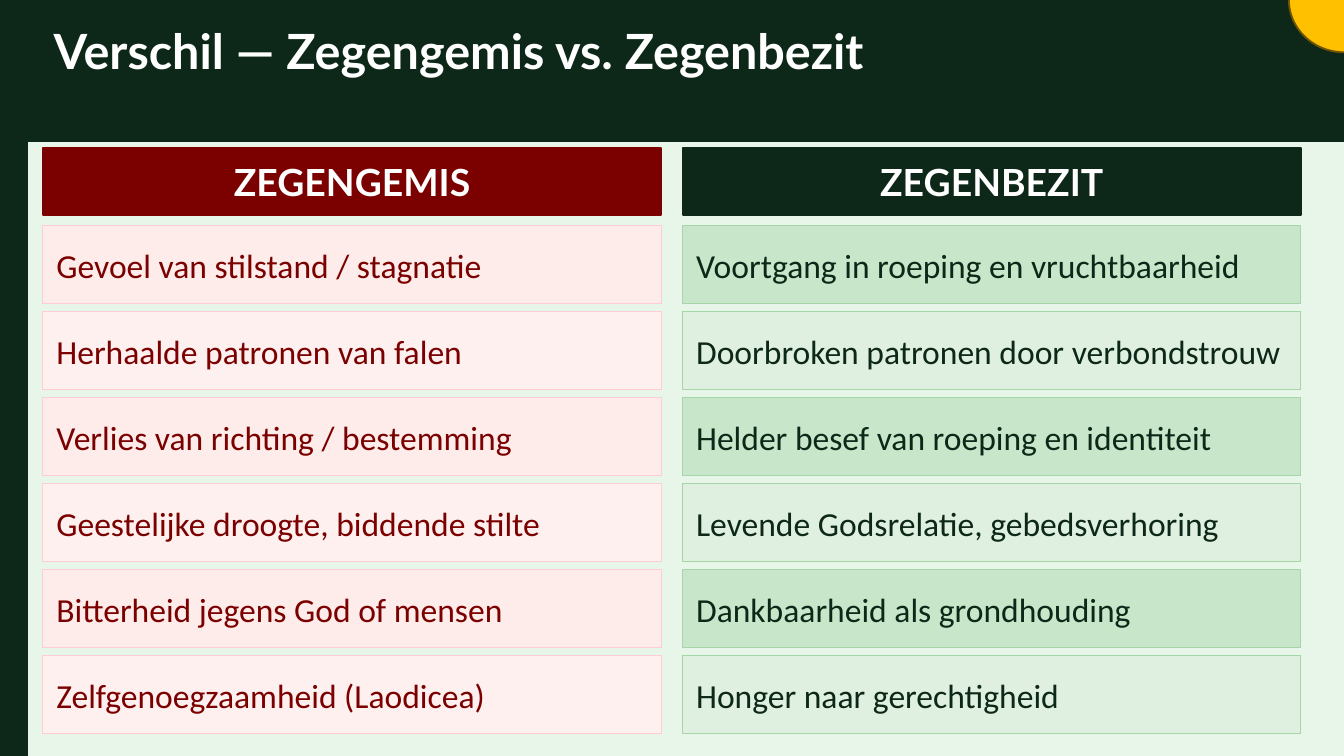
from dataclasses import dataclass

from pptx import Presentation
from pptx.dml.color import RGBColor
from pptx.enum.shapes import MSO_SHAPE
from pptx.enum.text import MSO_ANCHOR, PP_ALIGN
from pptx.util import Emu, Pt

RECTANGLE = MSO_SHAPE.RECTANGLE
OVAL = MSO_SHAPE.OVAL
LEFT = PP_ALIGN.LEFT
CENTER = PP_ALIGN.CENTER
MIDDLE = MSO_ANCHOR.MIDDLE

PX_PER_INCH = 200
EMU_PER_PX = 914400 // PX_PER_INCH


@dataclass(frozen=True)
class Theme:
    background: str = "E8F5E9"
    forest: str = "0D2818"
    maroon: str = "7B0000"
    white: str = "FFFFFF"
    gold: str = "FFC000"
    gold_edge: str = "705400"
    lack_fills: tuple = ("FDECEA", "FFF0F0")
    lack_edge: str = "FFCDD2"
    gain_fills: tuple = ("C8E6C9", "DFF0E0")
    gain_edge: str = "A5D6A7"
    heading_font: str = "Lato"
    body_font: str = "Calibri"
    title_size: int = 26
    heading_size: int = 20
    body_size: int = 18


def px(length):
    return Emu(length * EMU_PER_PX)


def rgb(value):
    return RGBColor.from_string(value)


class SlideBuilder:
    def __init__(self, slide, theme):
        self.slide = slide
        self.theme = theme
        slide.background.fill.solid()
        slide.background.fill.fore_color.rgb = rgb(theme.background)

    def block(self, box, fill, edge, weight=1, preset=RECTANGLE):
        shape = self.slide.shapes.add_shape(preset, *map(px, box))
        shape.shadow.inherit = False
        shape.fill.solid()
        shape.fill.fore_color.rgb = rgb(fill)
        shape.line.color.rgb = rgb(edge)
        shape.line.width = Pt(weight)

    def text(self, box, words, color, size, font, bold=False, align=LEFT):
        frame = self.slide.shapes.add_textbox(*map(px, box)).text_frame
        frame_format = {
            "word_wrap": True,
            "vertical_anchor": MIDDLE,
            "margin_left": 0,
            "margin_right": 0,
            "margin_top": 0,
            "margin_bottom": 0,
        }
        for attribute, value in frame_format.items():
            setattr(frame, attribute, value)
        paragraph = frame.paragraphs[0]
        paragraph.alignment = align
        run = paragraph.add_run()
        run.text = words
        run_format = {"name": font, "size": Pt(size), "bold": bold}
        for attribute, value in run_format.items():
            setattr(run.font, attribute, value)
        run.font.color.rgb = rgb(color)

    def heading(self, box, words, fill):
        theme = self.theme
        self.block(box, fill, fill)
        self.text(box, words, theme.white, theme.heading_size,
                  theme.heading_font, bold=True, align=CENTER)

    def card(self, box, words, color, fill, edge):
        left, top, width, height = box
        inset_x, inset_y = 20, 10
        inner = (left + inset_x, top + inset_y,
                 width - 2 * inset_x, height - 2 * inset_y)
        self.block(box, fill, edge, weight=0.5)
        self.text(inner, words, color, self.theme.body_size,
                  self.theme.body_font)


def main():
    slide_width, slide_height = 2000, 1125
    presentation = Presentation()
    presentation.slide_width = px(slide_width)
    presentation.slide_height = px(slide_height)
    theme = Theme()
    slide = presentation.slides.add_slide(presentation.slide_layouts[6])
    builder = SlideBuilder(slide, theme)

    builder.block((0, 0, 40, slide_height), theme.forest, theme.forest)
    builder.block((0, 0, slide_width, 210), theme.forest, theme.forest)
    builder.text((80, 16, 1840, 116), "Verschil — Zegengemis vs. Zegenbezit",
                 theme.white, theme.title_size, theme.heading_font, bold=True)

    columns = (
        ("ZEGENGEMIS", theme.maroon, theme.lack_fills, theme.lack_edge, (
            "Gevoel van stilstand / stagnatie",
            "Herhaalde patronen van falen",
            "Verlies van richting / bestemming",
            "Geestelijke droogte, biddende stilte",
            "Bitterheid jegens God of mensen",
            "Zelfgenoegzaamheid (Laodicea)",
        )),
        ("ZEGENBEZIT", theme.forest, theme.gain_fills, theme.gain_edge, (
            "Voortgang in roeping en vruchtbaarheid",
            "Doorbroken patronen door verbondstrouw",
            "Helder besef van roeping en identiteit",
            "Levende Godsrelatie, gebedsverhoring",
            "Dankbaarheid als grondhouding",
            "Honger naar gerechtigheid",
        )),
    )
    column_left, column_width, column_pitch = 64, 920, 952
    card_top, card_height, card_pitch = 336, 116, 128
    for column, (name, color, fills, edge, traits) in enumerate(columns):
        left = column_left + column * column_pitch
        builder.heading((left, 220, column_width, 100), name, color)
        for row, trait in enumerate(traits):
            top = card_top + row * card_pitch
            builder.card((left, top, column_width, card_height), trait,
                         color, fills[row % len(fills)], edge)

    builder.block((1918, -78, 166, 156), theme.gold, theme.gold_edge,
                  preset=OVAL)
    presentation.save("out.pptx")


if __name__ == "__main__":
    main()
